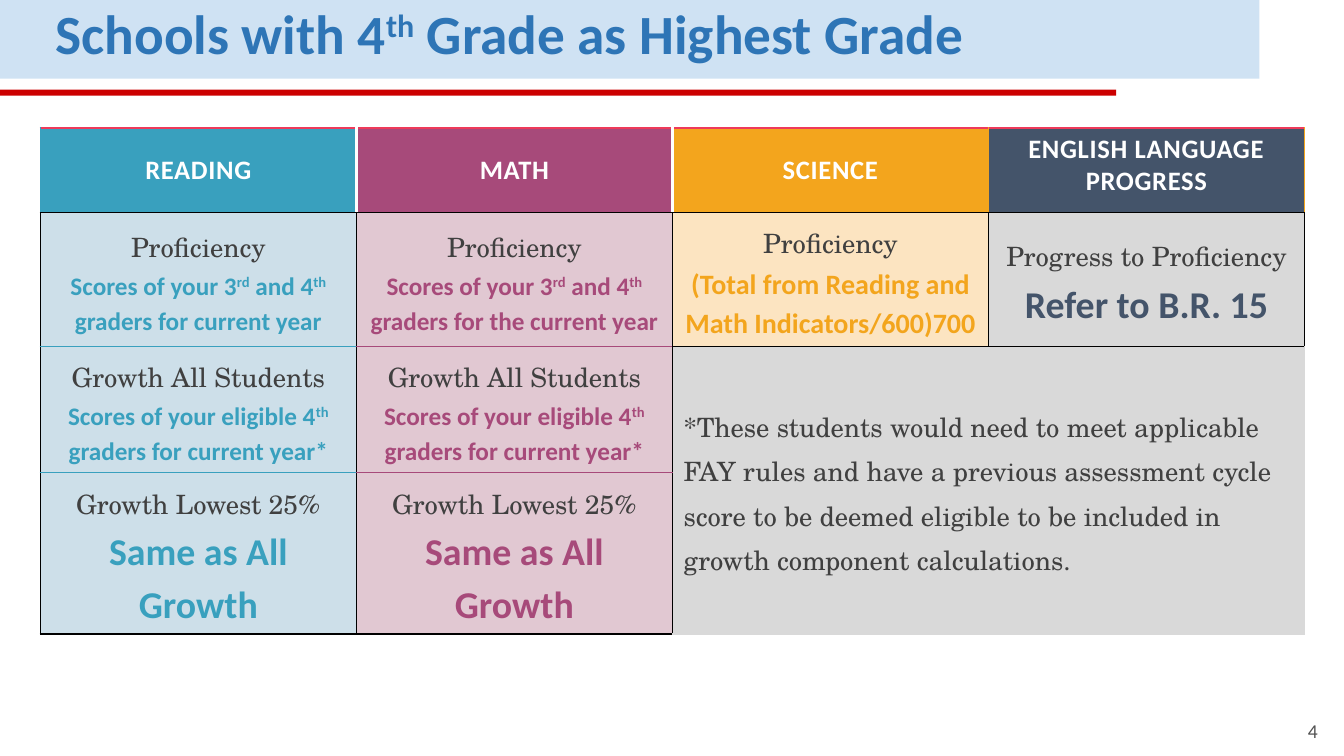
import pptx
import pptx.util
import pptx.dml.color
import pptx.enum.shapes
import pptx.enum.text
from lxml import etree

Inches, Pt = pptx.util.Inches, pptx.util.Pt
RGB = pptx.dml.color.RGBColor.from_string
ALIGN, ANCHOR = pptx.enum.text.PP_ALIGN, pptx.enum.text.MSO_ANCHOR

COLORS = {
    "band": "CFE2F3", "rule": "CC0000", "title": "2E75B6", "number": "525252",
    "reading": "39A0BE", "math": "A74A7A", "science": "F3A51D", "language": "44546A",
    "reading tint": "CDDFE9", "math tint": "E1C8D2", "science tint": "FCE4C1",
    "grey": "D9D9D9", "text": "404040", "black": "000000", "white": "FFFFFF",
    "top edge": "EE3A5A",
}
SANS, SERIF = "Calibri", "TeX Gyre Schola"

# Text between ^ marks is superscript.
TITLE = "Schools with 4^th^ Grade as Highest Grade"
PAGE = "4"
NOTE = ("*These students would need to meet applicable FAY rules and have a previous "
        "assessment cycle score to be deemed eligible to be included in growth "
        "component calculations.")
GROWTH = [
    ("Growth All Students", "Scores of your eligible 4^th^ graders for current year*", 18),
    ("Growth Lowest 25%", "Same as All Growth", 27),
]
# heading, accent, tint, indicators from top to bottom: (name, detail, detail size)
SUBJECTS = [
    ("READING", "reading", "reading tint", [
        ("Proficiency", "Scores of your 3^rd^ and 4^th^ graders for current year", 18),
        *GROWTH]),
    ("MATH", "math", "math tint", [
        ("Proficiency", "Scores of your 3^rd^ and 4^th^ graders for the current year", 18),
        *GROWTH]),
    ("SCIENCE", "science", "science tint", [
        ("Proficiency", "(Total from Reading and Math Indicators/600)700", 20)]),
    ("ENGLISH LANGUAGE PROGRESS", "language", "grey", [
        ("Progress to Proficiency", "Refer to B.R. 15", 27)]),
]
# left, top, right, bottom as (colour, points)
HEADER_SIDES = [
    (("reading", 1), ("white", 2.25)),
    (("white", 2.25), ("white", 2.25)),
    (("white", 2.25), ("science", 1)),
    (("science", 1), ("science", 1)),
]
ROW_HEIGHTS = [0.84, 1.33, 1.25, 1.6]
TABLE_LEFT, TABLE_TOP, TABLE_WIDTH = 0.4, 1.27, 12.54
BLACK = ("black", 1)


def style(font, size, color, name=SANS, bold=True):
    font.size, font.name, font.bold = Pt(size), name, bold
    font.color.rgb = RGB(COLORS[color])


def add_marked_runs(paragraph, text):
    """Add runs, raising the pieces between ^ marks, and return them."""
    runs = []
    for index, piece in enumerate(text.split("^")):
        run = paragraph.add_run()
        run.text = piece
        if index % 2:
            run.font._element.set("baseline", "30000")
        runs.append(run)
    return runs


def set_edges(cell, edges):
    properties = cell._tc.get_or_add_tcPr()
    for position, (side, (color, width)) in enumerate(zip("LRTB", edges)):
        line = etree.Element(pptx.oxml.ns.qn("a:ln" + side), w=str(Pt(width)))
        fill = etree.SubElement(line, pptx.oxml.ns.qn("a:solidFill"))
        etree.SubElement(fill, pptx.oxml.ns.qn("a:srgbClr"), val=COLORS[color])
        properties.insert(position, line)


def prepare_cell(cell, fill, edges):
    """Fill a cell and draw its edges, given as left, right, top, bottom."""
    cell.fill.solid()
    cell.fill.fore_color.rgb = RGB(COLORS[fill])
    cell.vertical_anchor = ANCHOR.MIDDLE
    cell.margin_left = cell.margin_right = Inches(0.11)
    cell.margin_top = cell.margin_bottom = Inches(0.05)
    set_edges(cell, edges)


def add_bar(slide, top, width, height, color):
    bar = slide.shapes.add_shape(pptx.enum.shapes.MSO_SHAPE.RECTANGLE, 0, Inches(top),
                                 Inches(width), Inches(height))
    bar.shadow.inherit = False
    bar.fill.solid()
    bar.fill.fore_color.rgb = RGB(COLORS[color])
    bar.line.fill.background()


def add_title(slide):
    title = slide.shapes.title
    slide.shapes._spTree.append(title._element)  # in front of the band
    title.left, title.top = Inches(0.45), Inches(0.05)
    title.width, title.height = Inches(12.04), Inches(0.66)
    title.text_frame.vertical_anchor = ANCHOR.MIDDLE
    title.text_frame.auto_size = pptx.enum.text.MSO_AUTO_SIZE.NONE
    paragraph = title.text_frame.paragraphs[0]
    paragraph.alignment, paragraph.line_spacing = ALIGN.LEFT, 0.8
    paragraph.space_before = Pt(0)
    add_marked_runs(paragraph, TITLE)
    style(paragraph.font, 39.5, "title")


def add_page_number(slide):
    box = slide.shapes.add_textbox(Inches(12.37), Inches(7.13), Inches(0.8), Inches(0.34))
    frame = box.text_frame
    frame.word_wrap, frame.vertical_anchor = True, ANCHOR.BOTTOM
    frame.margin_top = frame.margin_bottom = Inches(0.1)
    paragraph = frame.paragraphs[0]
    paragraph.text, paragraph.alignment = PAGE, ALIGN.RIGHT
    style(paragraph.font, 14, "number", bold=False)


def fill_header(cell, heading, accent, sides):
    prepare_cell(cell, accent, (*sides, ("top edge", 1), BLACK))
    if accent == "language":
        cell.vertical_anchor = ANCHOR.TOP
    paragraph = cell.text_frame.paragraphs[0]
    paragraph.alignment = ALIGN.CENTER
    run = paragraph.add_run()
    run.text = heading
    style(run.font, 19, "white")
    run.font._element.set("spc", "50")


def fill_indicator(cell, accent, indicator):
    name, detail, size = indicator
    frame = cell.text_frame
    paragraph = frame.paragraphs[0]
    name_run = paragraph.add_run()
    name_run.text = name
    style(name_run.font, 19, "text", SERIF, False)
    if accent == "language":
        paragraph = frame.add_paragraph()
    else:
        paragraph.add_line_break()
        paragraph.space_after = Pt(10)
    for run in add_marked_runs(paragraph, detail):
        style(run.font, size, accent)
    for paragraph in frame.paragraphs:
        paragraph.alignment, paragraph.line_spacing = ALIGN.CENTER, 1.15


def fill_note(table):
    for row in (2, 3):
        for column in (2, 3):
            left = BLACK if column == 2 else ("grey", 1)
            top = BLACK if row == 2 else ("grey", 1)
            prepare_cell(table.cell(row, column), "grey",
                         (left, ("grey", 1), top, ("grey", 1)))
    note = table.cell(2, 2)
    note.merge(table.cell(3, 3))
    paragraph = note.text_frame.paragraphs[0]
    paragraph.text = NOTE
    paragraph.line_spacing, paragraph.space_after = 1.15, Pt(10)
    style(paragraph.font, 19, "text", SERIF, False)


def add_indicator_table(slide):
    table = slide.shapes.add_table(
        len(ROW_HEIGHTS), len(SUBJECTS), Inches(TABLE_LEFT), Inches(TABLE_TOP),
        Inches(TABLE_WIDTH), Inches(sum(ROW_HEIGHTS))).table
    table.first_row = table.horz_banding = False
    for row, height in zip(table.rows, ROW_HEIGHTS):
        row.height = Inches(height)
    for column, (heading, accent, tint, indicators) in enumerate(SUBJECTS):
        fill_header(table.cell(0, column), heading, accent, HEADER_SIDES[column])
        last = len(indicators)
        for row, indicator in enumerate(indicators, 1):
            cell = table.cell(row, column)
            top = BLACK if row == 1 else (accent, 1)
            bottom = BLACK if row == last else (accent, 1)
            prepare_cell(cell, tint, (BLACK, BLACK, top, bottom))
            fill_indicator(cell, accent, indicator)
    fill_note(table)


def main():
    deck = pptx.Presentation()
    deck.slide_width, deck.slide_height = Inches(13.33), Inches(7.5)
    slide = deck.slides.add_slide(deck.slide_layouts.get_by_name("Title Only"))
    add_bar(slide, 0, 12.49, 0.78, "band")
    add_bar(slide, 0.89, 11.07, 0.06, "rule")
    add_title(slide)
    add_page_number(slide)
    add_indicator_table(slide)
    deck.save("out.pptx")


if __name__ == "__main__":
    main()
